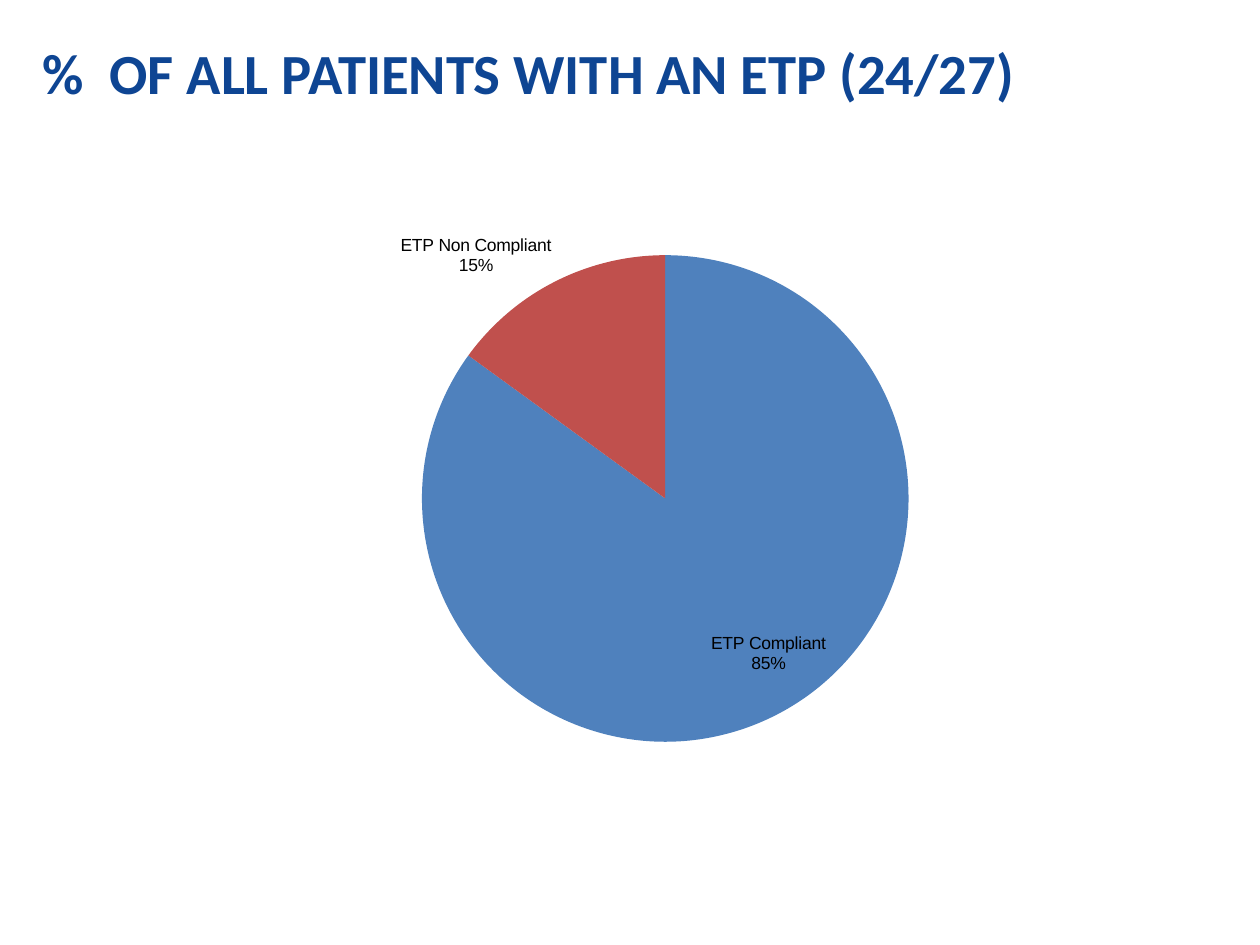
from dataclasses import dataclass

from lxml import etree
from pptx import Presentation
from pptx.chart.data import CategoryChartData
from pptx.dml.color import RGBColor
from pptx.enum.chart import XL_CHART_TYPE, XL_LABEL_POSITION
from pptx.enum.text import MSO_ANCHOR
from pptx.oxml.ns import qn
from pptx.util import Inches, Pt

PIE = XL_CHART_TYPE.PIE
BEST_FIT = XL_LABEL_POSITION.BEST_FIT
OUTSIDE_END = XL_LABEL_POSITION.OUTSIDE_END
TOP = MSO_ANCHOR.TOP

COLORS = {
    "title": "0E4593",
    "compliant": "4F81BD",
    "non_compliant": "C0504D",
    "label": "000000",
}
LEFT, WIDTH = 0.24, 9.42


@dataclass
class Slice:
    category: str
    value: int
    color: str
    position: XL_LABEL_POSITION


SLICES = [
    Slice("ETP Compliant", 85, "compliant", BEST_FIT),
    Slice("ETP Non Compliant", 15, "non_compliant", OUTSIDE_END),
]


def style_font(font, *, name: str, size: float, color: str, bold: bool = False) -> None:
    font.name = name
    font.size = Pt(size)
    font.bold = bold
    font.color.rgb = RGBColor.from_string(COLORS[color])


def write_text(frame, text: str, **style) -> None:
    frame.text = text
    for para in frame.paragraphs:
        for span in para.runs:
            style_font(span.font, **style)


def add_title(page, text: str) -> None:
    box = page.shapes.add_textbox(Inches(LEFT), Inches(0.36), Inches(WIDTH), Inches(0.88))
    frame = box.text_frame
    frame.word_wrap = True
    frame.vertical_anchor = TOP
    frame.margin_top = Inches(0)
    write_text(frame, text, name="Calibri", size=32.4, color="title", bold=True)
    frame.paragraphs[0].line_spacing = 0.9


def place_plot(chart, **fractions: float) -> None:
    plot_area = chart.element.find(".//" + qn("c:plotArea"))
    for old_layout in plot_area.findall(qn("c:layout")):
        plot_area.remove(old_layout)
    layout = etree.Element(qn("c:layout"))
    plot_area.insert(0, layout)
    manual = etree.SubElement(layout, qn("c:manualLayout"))
    settings = {"layoutTarget": "inner", "xMode": "edge", "yMode": "edge", **fractions}
    for tag, value in settings.items():
        etree.SubElement(manual, qn(f"c:{tag}")).set("val", str(value))


def add_pie(page, slices: list[Slice]) -> None:
    chart_data = CategoryChartData()
    chart_data.categories = [part.category for part in slices]
    chart_data.add_series("Series 1", [part.value for part in slices])
    chart = page.shapes.add_chart(
        PIE, Inches(LEFT), Inches(1.62), Inches(WIDTH), Inches(4.41), chart_data
    ).chart
    label_style = {"name": "Arial", "size": 10, "color": "label"}
    style_font(chart.font, **label_style)
    chart.has_legend = False
    chart.has_title = False
    place_plot(chart, x=0.33, y=0.09, w=0.41, h=0.88)

    plot = chart.plots[0]
    plot.vary_by_categories = True
    plot.has_data_labels = True
    labels = plot.data_labels
    labels.show_percentage = True
    labels.show_category_name = True
    labels.show_value = False
    labels.number_format = "0%"
    labels.number_format_is_linked = False
    for index, part in enumerate(slices):
        point = plot.series[0].points[index]
        point.format.fill.solid()
        point.format.fill.fore_color.rgb = RGBColor.from_string(COLORS[part.color])
        point.format.line.fill.background()
        label = point.data_label
        write_text(label.text_frame, f"{part.category}\n{part.value}%", **label_style)
        label.position = part.position


def main() -> None:
    deck = Presentation()
    deck.slide_width = Inches(10)
    deck.slide_height = Inches(7.5)
    page = deck.slides.add_slide(deck.slide_layouts[6])
    add_title(page, "%  OF ALL PATIENTS WITH AN ETP (24/27)")
    add_pie(page, SLICES)
    deck.save("out.pptx")


if __name__ == "__main__":
    main()
